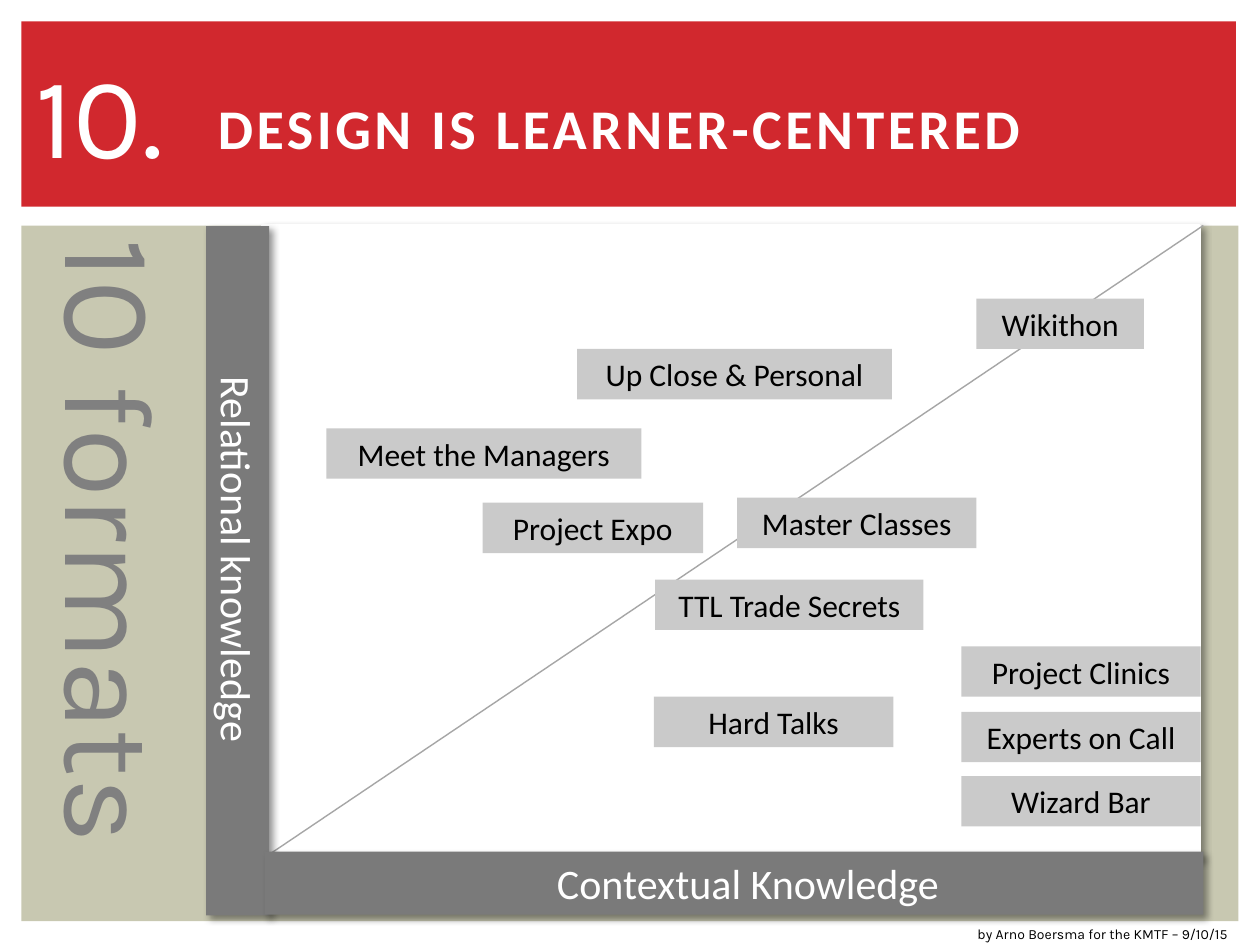
from dataclasses import dataclass

from lxml import etree
from pptx import Presentation
from pptx.dml.color import RGBColor
from pptx.enum.shapes import MSO_CONNECTOR, MSO_SHAPE
from pptx.enum.text import MSO_ANCHOR, MSO_AUTO_SIZE, PP_ALIGN
from pptx.oxml import parse_xml
from pptx.oxml.ns import nsdecls, qn
from pptx.util import Inches, Pt

RECTANGLE = MSO_SHAPE.RECTANGLE
STRAIGHT = MSO_CONNECTOR.STRAIGHT
TOP = MSO_ANCHOR.TOP
MIDDLE = MSO_ANCHOR.MIDDLE
GROW = MSO_AUTO_SIZE.SHAPE_TO_FIT_TEXT
FIXED = MSO_AUTO_SIZE.NONE
LEFT = PP_ALIGN.LEFT
CENTER = PP_ALIGN.CENTER

WHITE = RGBColor(0xFF, 0xFF, 0xFF)
BLACK = RGBColor(0x00, 0x00, 0x00)
RED = RGBColor(0xD1, 0x28, 0x2E)
SAGE = RGBColor(0xC8, 0xC8, 0xB1)
AXIS_GRAY = RGBColor(0x7A, 0x7A, 0x7A)
LABEL_GRAY = RGBColor(0xCA, 0xCA, 0xCA)
LINE_GRAY = RGBColor(0xA6, 0xA6, 0xA6)
TEXT_GRAY = RGBColor(0x80, 0x80, 0x80)

BODY_FONT = "Calibri"
DISPLAY_FONT = "Karla"
LABEL_HEIGHT = 0.4

SHADOW_XML = (
    f'<a:effectLst {nsdecls("a")}>'
    '<a:outerShdw blurRad="50800" dist="38100" dir="2700000" '
    'algn="tl" rotWithShape="0"><a:srgbClr val="000000">'
    '<a:alpha val="40000"/></a:srgbClr></a:outerShdw></a:effectLst>'
)


@dataclass(frozen=True)
class Area:
    left: float
    top: float
    width: float
    height: float

    def lengths(self) -> tuple:
        return tuple(map(Inches, (self.left, self.top, self.width, self.height)))


@dataclass(frozen=True)
class TextStyle:
    font: str
    size: float
    color: RGBColor
    align: PP_ALIGN = CENTER
    bold: bool = False
    wrap: bool = True
    anchor: MSO_ANCHOR = TOP
    autosize: MSO_AUTO_SIZE = GROW


@dataclass(frozen=True)
class Axis:
    text: str
    area: Area
    rotation: float
    left_inset: float
    right_inset: float


@dataclass(frozen=True)
class Format:
    name: str
    left: float
    top: float
    width: float


AXIS_STYLE = TextStyle(BODY_FONT, 24, WHITE)
FORMAT_STYLE = TextStyle(BODY_FONT, 18, BLACK)
TITLE_STYLE = TextStyle(BODY_FONT, 32, WHITE, LEFT, bold=True, anchor=MIDDLE, autosize=FIXED)
NUMBER_STYLE = TextStyle(DISPLAY_FONT, 66, WHITE)
SIDE_STYLE = TextStyle(DISPLAY_FONT, 72, TEXT_GRAY, LEFT)
CREDIT_STYLE = TextStyle(DISPLAY_FONT, 8, BLACK, LEFT, wrap=False)

AXES = (
    Axis("Relational knowledge", Area(-0.85, 4.28, 5.47, 0.5), 90, 0.1, 0.28),
    Axis("Contextual Knowledge", Area(2.1, 6.76, 7.45, 0.5), 0, 0.32, 0.1),
)

FORMATS = (
    Format("Wikithon", 7.75, 2.37, 1.33),
    Format("Up Close & Personal", 4.58, 2.77, 2.5),
    Format("Meet the Managers", 2.59, 3.4, 2.5),
    Format("Project Expo", 3.83, 3.99, 1.75),
    Format("Master Classes", 5.85, 3.95, 1.9),
    Format("TTL Trade Secrets", 5.2, 4.6, 2.13),
    Format("Project Clinics", 7.63, 5.13, 1.9),
    Format("Experts on Call", 7.63, 5.65, 1.9),
    Format("Wizard Bar", 7.63, 6.16, 1.9),
    Format("Hard Talks", 5.19, 5.53, 1.9),
)


def write_text(shape, text: str, style: TextStyle):
    frame = shape.text_frame
    frame.word_wrap = style.wrap
    frame.auto_size = style.autosize
    frame.vertical_anchor = style.anchor
    para = frame.paragraphs[0]
    para.text = text
    para.alignment = style.align
    para.font.name = style.font
    para.font.size = Pt(style.size)
    para.font.bold = style.bold
    para.font.color.rgb = style.color
    return para


def add_panel(page, area: Area, color: RGBColor, shadow: bool = False):
    panel = page.shapes.add_shape(RECTANGLE, *area.lengths())
    panel.fill.solid()
    panel.fill.fore_color.rgb = color
    panel.line.fill.background()
    panel.shadow.inherit = False
    if shadow:
        properties = panel._element.spPr
        properties.replace(properties.find(qn("a:effectLst")), parse_xml(SHADOW_XML))
    return panel


def add_text(page, text: str, area: Area, style: TextStyle, rotation: float = 0):
    box = page.shapes.add_textbox(*area.lengths())
    box.rotation = rotation
    return write_text(box, text, style)


def add_axis(page, axis: Axis) -> None:
    bar = add_panel(page, axis.area, AXIS_GRAY, shadow=True)
    bar.rotation = axis.rotation
    bar.text_frame.margin_left = Inches(axis.left_inset)
    bar.text_frame.margin_right = Inches(axis.right_inset)
    write_text(bar, axis.text, AXIS_STYLE)


def add_format(page, item: Format) -> None:
    label = add_panel(page, Area(item.left, item.top, item.width, LABEL_HEIGHT), LABEL_GRAY)
    write_text(label, item.name, FORMAT_STYLE)


def add_diagonal(page) -> None:
    ends = map(Inches, (2.08, 6.82, 9.55, 1.79))
    diagonal = page.shapes.add_connector(STRAIGHT, *ends)
    diagonal.line.color.rgb = LINE_GRAY
    diagonal.line.width = Pt(0.79)
    etree.SubElement(diagonal._element.spPr, qn("a:effectLst"))


def main() -> None:
    deck = Presentation()
    deck.slide_width = Inches(10)
    deck.slide_height = Inches(7.5)
    page = deck.slides.add_slide(deck.slide_layouts[6])

    add_panel(page, Area(0.17, 1.79, 9.66, 5.52), SAGE)
    add_panel(page, Area(0.17, 0.17, 9.64, 1.47), RED)
    title = add_text(page, "DESIGN IS LEARNER-CENTERED", Area(1.63, 0.43, 7.95, 1.15), TITLE_STYLE)
    title.runs[0].font._element.set("spc", "200")

    chart = add_panel(page, Area(2.08, 1.79, 7.44, 5.02), WHITE, shadow=True)
    chart.line.color.rgb = WHITE
    chart.line.width = Pt(1.5)
    add_diagonal(page)
    for axis in AXES:
        add_axis(page, axis)
    for item in FORMATS:
        add_format(page, item)

    add_text(page, "10 formats", Area(-1.82, 3.87, 5.46, 1.31), SIDE_STYLE, rotation=90)
    add_text(page, "10.", Area(0, 0.29, 1.58, 1.21), NUMBER_STYLE)
    add_text(page, "by Arno Boersma for the KMTF – 9/10/15", Area(7.66, 7.3, 2.24, 0.24), CREDIT_STYLE)
    deck.save("out.pptx")


if __name__ == "__main__":
    main()
